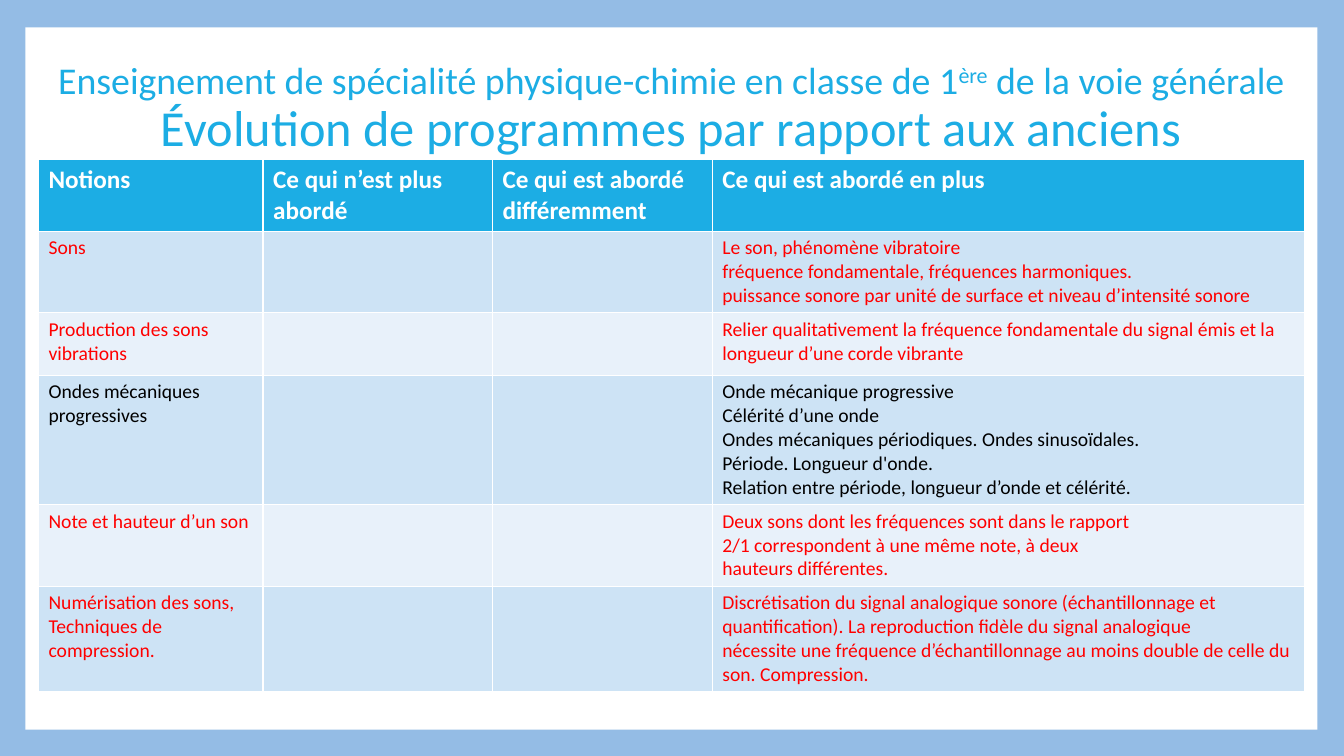
"""Build the slide comparing the new physics and chemistry syllabus with the old."""
import pptx
import pptx.util
import pptx.dml.color
import pptx.enum.shapes
import pptx.enum.text

Cm, Pt = pptx.util.Cm, pptx.util.Pt
RGBColor = pptx.dml.color.RGBColor
BLUE = RGBColor(0x1C, 0xAD, 0xE4)
FRAME = RGBColor(0x94, 0xBC, 0xE5)
DARK = RGBColor(0xCD, 0xE3, 0xF5)
PALE = RGBColor(0xE8, 0xF1, 0xFA)
WHITE = RGBColor(0xFF, 0xFF, 0xFF)
RED = RGBColor(0xFF, 0x00, 0x00)
BLACK = RGBColor(0x00, 0x00, 0x00)

HEADS = ["Notions", "Ce qui n’est plus abordé", "Ce qui est abordé différemment",
         "Ce qui est abordé en plus"]
TOPICS = [
    ("Sons", RED, 2.05,
     ["Le son, phénomène vibratoire",
      "fréquence fondamentale, fréquences harmoniques.",
      "puissance sonore par unité de surface et niveau d’intensité sonore"]),
    ("Production des sons vibrations", RED, 1.57,
     ["Relier qualitativement la fréquence fondamentale du signal émis et la "
      "longueur d’une corde vibrante"]),
    ("Ondes mécaniques progressives", BLACK, 3.25,
     ["Onde mécanique progressive",
      "Célérité d’une onde",
      "Ondes mécaniques périodiques. Ondes sinusoïdales.",
      "Période. Longueur d'onde.",
      "Relation entre période, longueur d’onde et célérité."]),
    ("Note et hauteur d’un son", RED, 2.05,
     ["Deux sons dont les fréquences sont dans le rapport",
      "2/1 correspondent à une même note, à deux",
      "hauteurs différentes."]),
    ("Numérisation des sons, Techniques de compression.", RED, 2.65,
     ["Discrétisation du signal analogique sonore (échantillonnage et "
      "quantification). La reproduction fidèle du signal analogique",
      "nécessite une fréquence d’échantillonnage au moins double de celle du "
      "son. Compression."]),
]
WIDTHS = [5.66, 5.78, 5.54, 14.92]


def style(font, size, color, bold=False):
    look = {"name": "Calibri", "size": Pt(size), "bold": bold}
    for key, value in look.items():
        setattr(font, key, value)
    font.color.rgb = color


def fill_cell(cell, text, fill, size, color, bold=False):
    cell.fill.solid()
    cell.fill.fore_color.rgb = fill
    cell.text = text
    for para in cell.text_frame.paragraphs:
        style(para.font, size, color, bold)
        for run in para.runs:
            style(run.font, size, color, bold)


deck = pptx.Presentation()
deck.slide_width, deck.slide_height = Cm(33.87), Cm(19.05)
slide = deck.slides.add_slide(deck.slide_layouts[5])
slide.background.fill.solid()
slide.background.fill.fore_color.rgb = FRAME

panel = slide.shapes.add_shape(pptx.enum.shapes.MSO_SHAPE.RECTANGLE,
                               Cm(0.64), Cm(0.69), Cm(32.56), Cm(17.7))
panel.shadow.inherit = False
panel.fill.solid()
panel.fill.fore_color.rgb = WHITE
panel.line.fill.background()

rows = len(TOPICS) + 1
table = slide.shapes.add_table(rows, len(HEADS), Cm(0.97), Cm(4.02),
                               Cm(sum(WIDTHS)), Cm(13.35)).table
for col, width in zip(table.columns, WIDTHS):
    col.width = Cm(width)
table.rows[0].height = Cm(1.78)
for col, head in enumerate(HEADS):
    fill_cell(table.cell(0, col), head, BLUE, 18, WHITE, True)
for row, (topic, color, height, added) in enumerate(TOPICS, 1):
    table.rows[row].height = Cm(height)
    for col, text in enumerate([topic, "", "", "\n".join(added)]):
        fill_cell(table.cell(row, col), text, DARK if row % 2 else PALE, 14, color)

title = slide.shapes.title
place = {"left": 0.38, "top": 0.99, "width": 33.07, "height": 3.53}
for key, value in place.items():
    setattr(title, key, Cm(value))
frame = title.text_frame
setup = {"word_wrap": True, "auto_size": pptx.enum.text.MSO_AUTO_SIZE.NONE,
         "vertical_anchor": pptx.enum.text.MSO_ANCHOR.MIDDLE}
for key, value in setup.items():
    setattr(frame, key, value)
para = frame.paragraphs[0]
para.alignment = pptx.enum.text.PP_ALIGN.CENTER
para.line_spacing = 0.9
for text, size, raised in [
        ("Enseignement de spécialité physique-chimie en classe de 1", 27, False),
        ("ère", 27, True),
        (" de la voie générale", 27, False),
        ("Évolution de programmes par rapport aux anciens", 36, False)]:
    if size == 36:
        para.add_line_break()
    run = para.add_run()
    run.text = text
    style(run.font, size, BLUE)
    if raised:
        run._r.get_or_add_rPr().set("baseline", "30000")
slide.shapes._spTree.append(title._element)

deck.save("out.pptx")
